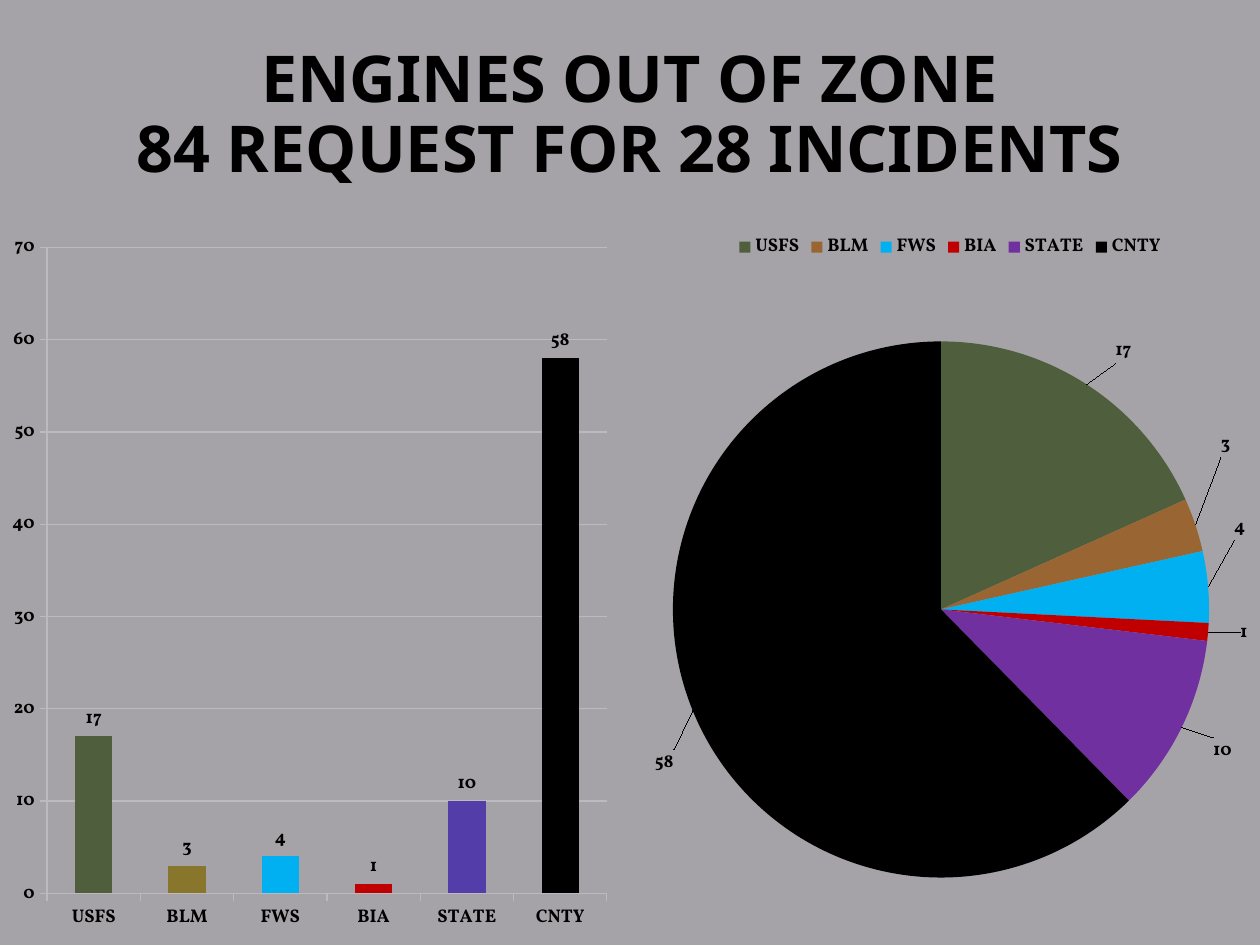
from lxml import etree
from pptx import Presentation
from pptx import util as u
from pptx.chart.data import CategoryChartData
from pptx.dml.color import RGBColor
from pptx.enum import chart as ch, text
from pptx.oxml import parse_xml
from pptx.oxml.ns import nsdecls, qn

COLORS = {
    "background": "A5A3A8", "text": "000000", "grid": "BCBABF",
    "green": "4F5E3C", "olive": "88762C", "brown": "996633", "blue": "00B0F0",
    "red": "C00000", "indigo": "533EA9", "purple": "7030A0", "black": "000000",
}
AGENCIES = ["USFS", "BLM", "FWS", "BIA", "STATE", "CNTY"]
REQUESTS = [17, 3, 4, 1, 10, 58]
BAR_COLORS = ["green", "olive", "blue", "red", "indigo", "black"]
PIE_COLORS = ["green", "brown", "blue", "red", "purple", "black"]
LABEL_OFFSETS = [(0.04, -0.02), (0.03, -0.09), (0.03, -0.08),
                 (0.04, 0), (0.04, 0.01), (-0.02, 0.05)]


def layout_xml(inner=False, **values):
    """Return a manual chart layout holding the given fractions."""
    layout = parse_xml(f"<c:layout {nsdecls('c')}><c:manualLayout/></c:layout>")
    modes = {"layoutTarget": "inner", "xMode": "edge", "yMode": "edge"} if inner else {}
    for name, value in {**modes, **values}.items():
        etree.SubElement(layout[0], qn(f"c:{name}")).set("val", str(value))
    return layout


class Deck:
    """Hold the style and the current slide."""

    def __init__(self):
        self.prs = Presentation()
        self.prs.slide_width, self.prs.slide_height = u.Inches(10), u.Inches(7.5)
        self.s = self.prs.slides.add_slide(self.prs.slide_layouts[5])
        self.fill(self.s.background, "background")

    def color(self, name):
        return RGBColor.from_string(COLORS[name])

    def fill(self, owner, name):
        owner.fill.solid()
        owner.fill.fore_color.rgb = self.color(name)

    def style(self, font, name, size):
        font.name, font.size, font.bold = name, u.Pt(size), True
        font.color.rgb = self.color("text")

    def title(self, lines, left, top, width, height):
        sp = self.s.shapes.title
        sp.left, sp.top = u.Inches(left), u.Inches(top)
        sp.width, sp.height = u.Inches(width), u.Inches(height)
        tf = sp.text_frame
        tf.auto_size = text.MSO_AUTO_SIZE.NONE
        tf.vertical_anchor = text.MSO_ANCHOR.MIDDLE
        p = tf.paragraphs[0]
        p.alignment, p.line_spacing = text.PP_ALIGN.CENTER, 0.9
        for i, line in enumerate(lines):
            if i:
                p.add_line_break()
            r = p.add_run()
            r.text = line
            self.style(r.font, "Noto Sans", 36.9)

    def chart(self, kind, left, colors, **plot_area):
        data = CategoryChartData()
        data.categories = AGENCIES
        data.add_series("Series 1", REQUESTS)
        chart = self.s.shapes.add_chart(
            kind, u.Inches(left), u.Inches(1.75), u.Inches(4.92), u.Inches(5.75), data).chart
        chart.has_title = chart.has_legend = False
        self.style(chart.font, "Vollkorn", 10.5)
        area = chart.plots[0]._element.getparent()
        for old in area.findall(qn("c:layout")):
            area.remove(old)
        area.insert(0, layout_xml(True, **plot_area))
        series = chart.plots[0].series[0]
        for i, name in enumerate(colors):
            self.fill(series.points[i].format, name)
        series.data_labels.show_value = True
        series.data_labels.position = ch.XL_LABEL_POSITION.OUTSIDE_END
        return chart

    def columns(self, left):
        chart = self.chart(ch.XL_CHART_TYPE.COLUMN_CLUSTERED, left, BAR_COLORS,
                           x=0.076, y=0.037, w=0.903, h=0.892)
        plot = chart.plots[0]
        plot.gap_width, plot.vary_by_categories = 150, False
        values = chart.value_axis
        values.minimum_scale, values.maximum_scale, values.major_unit = 0, 70, 10
        values.has_major_gridlines = True
        for axis in (chart.category_axis, values):
            axis.major_tick_mark = ch.XL_TICK_MARK.OUTSIDE
        for part in (chart.category_axis, values, values.major_gridlines):
            part.format.line.color.rgb = self.color("grid")
            part.format.line.width = u.Pt(0.75)

    def pie(self, left):
        chart = self.chart(ch.XL_CHART_TYPE.PIE, left, PIE_COLORS,
                           x=0.053, y=0.157, w=0.865, h=0.76)
        chart.has_legend = True
        chart.legend.position = ch.XL_LEGEND_POSITION.TOP
        chart.legend.include_in_layout = False
        series = chart.plots[0].series[0]
        for i, (x, y) in enumerate(LABEL_OFFSETS):
            series.points[i].data_label.position = ch.XL_LABEL_POSITION.OUTSIDE_END
            label = series.data_labels._element.findall(qn("c:dLbl"))[i]
            label.insert(1, layout_xml(x=x, y=y))


def main():
    deck = Deck()
    deck.title(["ENGINES OUT OF ZONE", "84 REQUEST FOR 28 INCIDENTS"], 0.5, 0.3, 9, 1.25)
    deck.columns(0)
    deck.pie(5.08)
    deck.prs.save("out.pptx")


if __name__ == "__main__":
    main()
